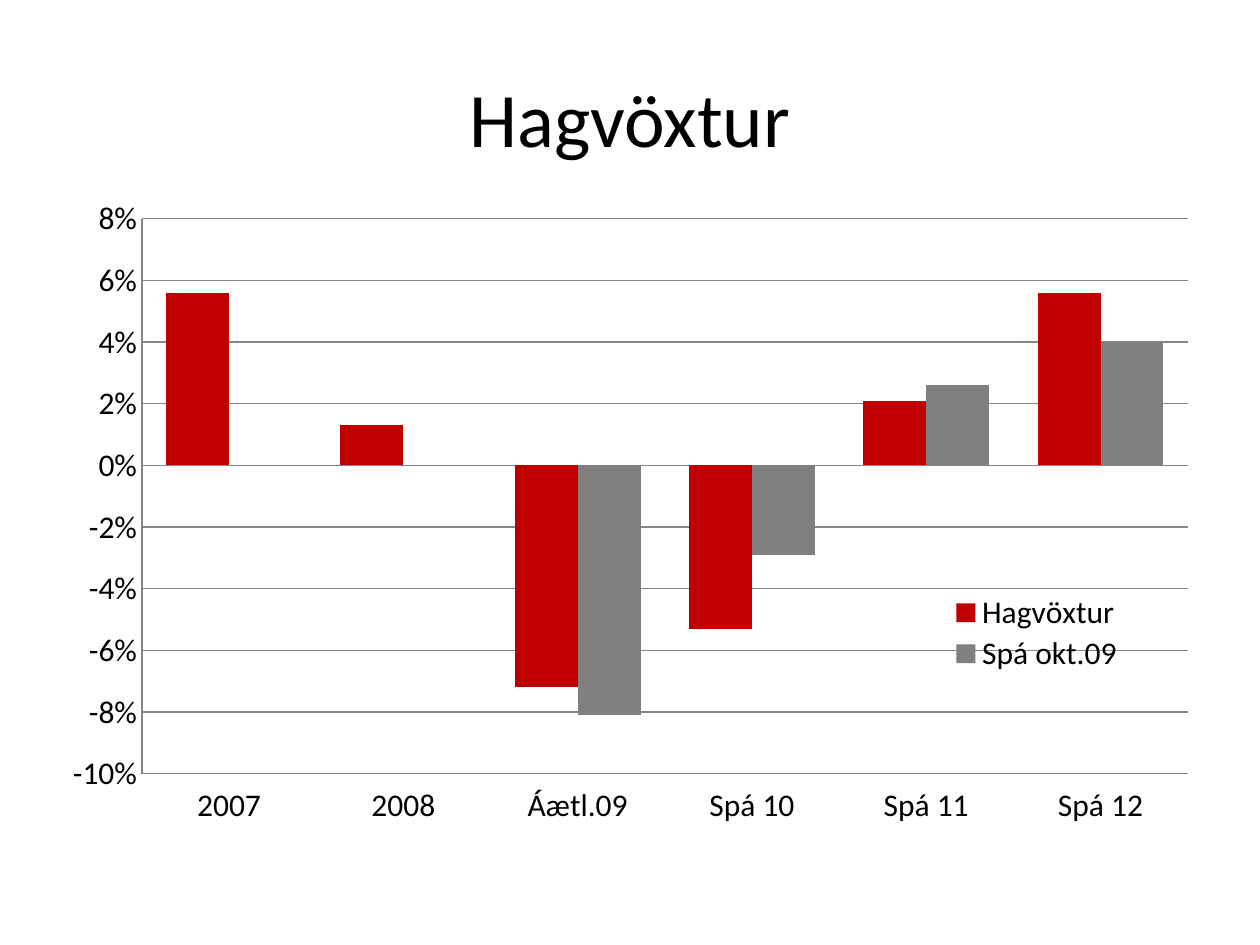
from lxml.etree import SubElement
from pptx import Presentation
from pptx.chart.data import CategoryChartData
from pptx.dml.color import RGBColor
from pptx.enum.chart import XL_CHART_TYPE, XL_LEGEND_POSITION, XL_TICK_LABEL_POSITION, XL_TICK_MARK
from pptx.enum.text import MSO_ANCHOR, PP_ALIGN
from pptx.oxml.ns import qn
from pptx.util import Emu, Pt

EMU_PER_PX = 914400 / 126
BLACK = RGBColor(0x00, 0x00, 0x00)
RED = RGBColor(0xC0, 0x00, 0x00)
GRAY = RGBColor(0x80, 0x80, 0x80)
LINE_GRAY = RGBColor(0x86, 0x86, 0x86)

CATEGORIES = ["2007", "2008", "Áætl.09", "Spá 10", "Spá 11", "Spá 12"]
SERIES = [
    ("Hagvöxtur", [0.056, 0.013, -0.072, -0.053, 0.021, 0.056], RED),
    ("Spá okt.09", [None, None, -0.081, -0.029, 0.026, 0.04], GRAY),
]


def px(length):
    """Turn a pixel length into EMU."""
    return Emu(round(length * EMU_PER_PX))


def set_attributes(target, values):
    """Set each named value on the target."""
    for name, value in values.items():
        setattr(target, name, value)


def format_font(font, size):
    """Give a font the slide's typeface, colour and the given size."""
    set_attributes(font, {"name": "Calibri", "size": Pt(size), "bold": False})
    font.color.rgb = BLACK


def format_line(line):
    """Draw a thin gray chart line."""
    line.width = Pt(0.75)
    line.color.rgb = LINE_GRAY


def add_title(slide, text):
    """Place and format the slide title."""
    title = slide.shapes.title
    set_attributes(title, {"left": px(63), "top": px(38), "width": px(1134), "height": px(158)})
    set_attributes(title.text_frame, {"text": text, "vertical_anchor": MSO_ANCHOR.MIDDLE})
    paragraph = title.text_frame.paragraphs[0]
    paragraph.alignment = PP_ALIGN.CENTER
    format_font(paragraph.runs[0].font, 44)


def set_layout(layout, fractions, inner=False):
    """Fill a chart layout element with left, top, width and height fractions."""
    manual = SubElement(layout, qn("c:manualLayout"))
    values = [("layoutTarget", "inner")] if inner else []
    values += [("xMode", "edge"), ("yMode", "edge")]
    values += zip("xywh", fractions)
    for name, value in values:
        SubElement(manual, qn(f"c:{name}")).set("val", str(value))


def place_part(part, index, fractions, inner=False):
    """Replace the layout of a chart part at its child index."""
    for layout in part.findall(qn("c:layout")):
        part.remove(layout)
    layout = SubElement(part, qn("c:layout"))
    part.insert(index, layout)
    set_layout(layout, fractions, inner)


def format_axes(chart):
    """Format the category and percentage axes."""
    category_axis, value_axis = chart.category_axis, chart.value_axis
    for axis in (category_axis, value_axis):
        set_attributes(axis, {"major_tick_mark": XL_TICK_MARK.NONE, "minor_tick_mark": XL_TICK_MARK.NONE})
        format_line(axis.format.line)
    category_axis.tick_label_position = XL_TICK_LABEL_POSITION.LOW
    set_attributes(value_axis, {
        "minimum_scale": -0.1, "maximum_scale": 0.08, "major_unit": 0.02, "has_major_gridlines": True,
    })
    set_attributes(value_axis.tick_labels, {"number_format": "0%", "number_format_is_linked": False})
    format_line(value_axis.major_gridlines.format.line)


def add_growth_chart(slide):
    """Add the clustered column chart with its overlaid legend."""
    data = CategoryChartData(number_format="0.0%")
    data.categories = CATEGORIES
    for name, values, _ in SERIES:
        data.add_series(name, values)
    chart = slide.shapes.add_chart(
        XL_CHART_TYPE.COLUMN_CLUSTERED, px(49), px(186), px(1162), px(653), data
    ).chart
    set_attributes(chart, {"has_title": False, "has_legend": True})
    format_font(chart.font, 18)
    format_axes(chart)
    plot = chart.plots[0]
    set_attributes(plot, {"gap_width": 77, "overlap": 0, "vary_by_categories": False})
    for series, (_, _, color) in zip(plot.series, SERIES):
        series.invert_if_negative = False
        series.format.fill.solid()
        series.format.fill.fore_color.rgb = color
    legend = chart.legend
    set_attributes(legend, {"position": XL_LEGEND_POSITION.RIGHT, "include_in_layout": True})
    format_font(legend.font, 18)
    place_part(legend._element, 1, (0.77, 0.62, 0.16, 0.13))
    place_part(chart._chartSpace.chart.plotArea, 0, (0.08, 0.05, 0.9, 0.85), inner=True)


def main():
    """Build and save the slide."""
    presentation = Presentation()
    set_attributes(presentation, {"slide_width": px(1260), "slide_height": px(945)})
    slide = presentation.slides.add_slide(presentation.slide_layouts[5])
    add_title(slide, "Hagvöxtur")
    add_growth_chart(slide)
    presentation.save("out.pptx")


if __name__ == "__main__":
    main()
